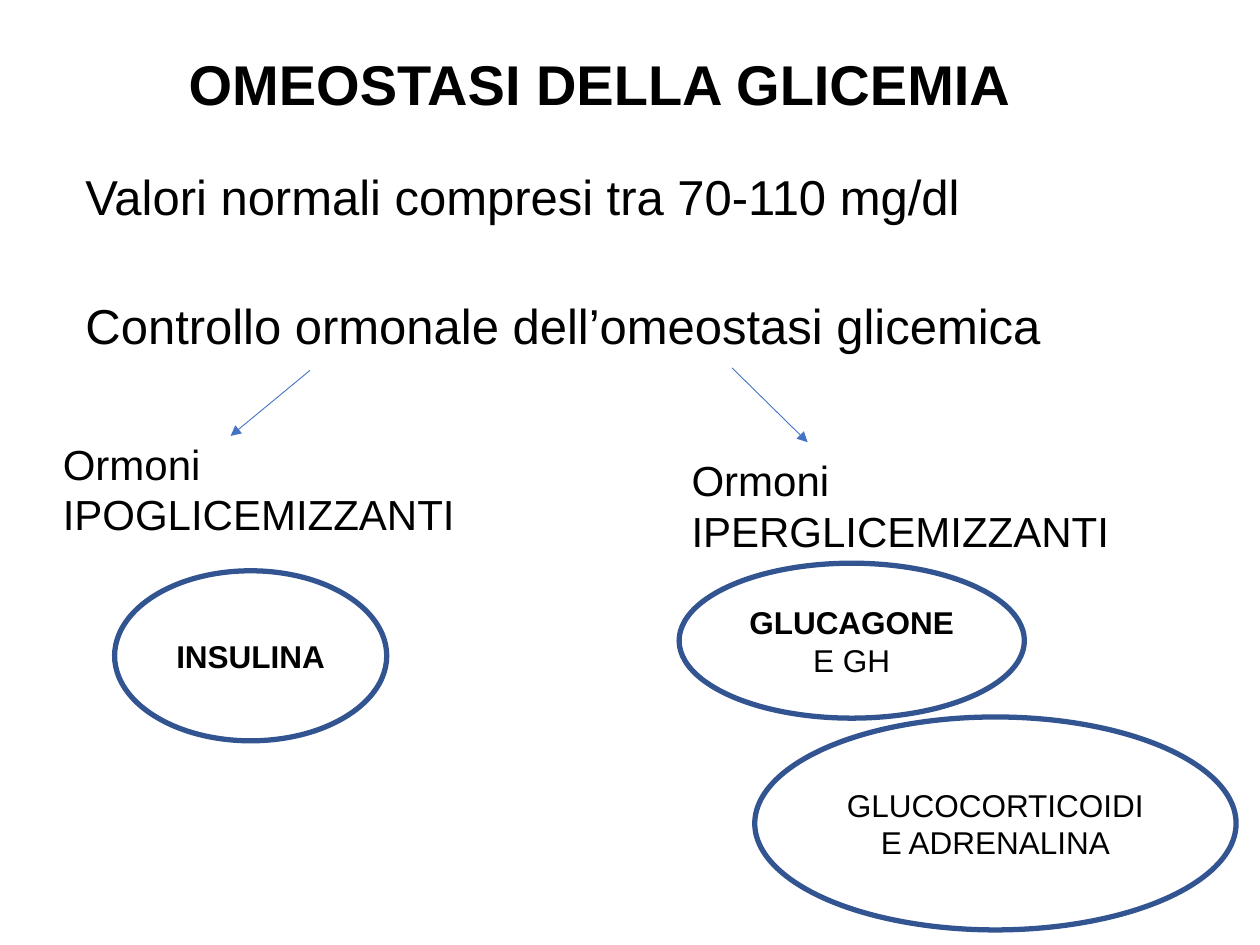
"""Build the slide on the hormonal control of blood glucose."""
from typing import NamedTuple

from lxml import etree
from pptx import Presentation
from pptx import util as u
from pptx.dml.color import RGBColor
from pptx.enum import shapes, text
from pptx.oxml import ns

BLACK = RGBColor(0x00, 0x00, 0x00)
WHITE = RGBColor(0xFF, 0xFF, 0xFF)
ARROW_BLUE = RGBColor(0x44, 0x72, 0xC4)
OUTLINE_BLUE = RGBColor(0x32, 0x54, 0x91)


class Box(NamedTuple):
    left: float
    top: float
    width: float
    height: float

    def lengths(self) -> list[u.Length]:
        return [u.Inches(value) for value in self]


class Label(NamedTuple):
    box: Box
    wording: str
    size: int
    bold: bool = False
    centered: bool = False


class Hormone(NamedTuple):
    box: Box
    bold_part: str = ""
    plain_part: str = ""


class Arrow(NamedTuple):
    start_x: float
    start_y: float
    end_x: float
    end_y: float


LABELS = [
    Label(Box(0.67, 0.34, 8.18, 0.64), "OMEOSTASI DELLA GLICEMIA", 32, True, True),
    Label(Box(0.58, 1.27, 8.85, 0.57), "Valori normali compresi tra 70-110 mg/dl", 28),
    Label(Box(0.58, 2.3, 8.85, 0.57), "Controllo ormonale dell’omeostasi glicemica", 28),
    Label(Box(0.4, 3.43, 3.49, 0.91), "Ormoni IPOGLICEMIZZANTI", 24),
    Label(Box(5.39, 3.56, 3.64, 0.91), "Ormoni IPERGLICEMIZZANTI", 24),
]
HORMONES = [
    Hormone(Box(0.91, 4.53, 2.16, 1.35), bold_part="INSULINA"),
    Hormone(Box(5.39, 4.47, 2.74, 1.23), "GLUCAGONE ", "E GH"),
    Hormone(Box(5.99, 5.69, 3.82, 1.69), plain_part="GLUCOCORTICOIDI E ADRENALINA"),
]
ARROWS = [Arrow(2.46, 2.94, 1.83, 3.46), Arrow(5.81, 2.92, 6.41, 3.51)]


def add_run(paragraph, wording: str, *, size: int, bold: bool = False) -> None:
    run = paragraph.add_run()
    run.text = wording
    run.font.name = "Arial"
    run.font.size = u.Pt(size)
    run.font.bold = bold
    run.font.color.rgb = BLACK


def add_label(slide, label: Label) -> None:
    frame = slide.shapes.add_textbox(*label.box.lengths()).text_frame
    frame.word_wrap = True
    paragraph = frame.paragraphs[0]
    if label.centered:
        paragraph.alignment = text.PP_ALIGN.CENTER
    add_run(paragraph, label.wording, size=label.size, bold=label.bold)


def add_hormone(slide, hormone: Hormone) -> None:
    shape = slide.shapes.add_shape(shapes.MSO_SHAPE.OVAL, *hormone.box.lengths())
    shape.shadow.inherit = False
    shape.fill.solid()
    shape.fill.fore_color.rgb = WHITE
    shape.line.color.rgb = OUTLINE_BLUE
    shape.line.width = u.Pt(3)
    frame = shape.text_frame
    frame.word_wrap = True
    frame.vertical_anchor = text.MSO_ANCHOR.MIDDLE
    paragraph = frame.paragraphs[0]
    paragraph.alignment = text.PP_ALIGN.CENTER
    for wording, bold in ((hormone.bold_part, True), (hormone.plain_part, False)):
        if wording:
            add_run(paragraph, wording, size=18, bold=bold)


def add_arrow(slide, arrow: Arrow) -> None:
    connector = slide.shapes.add_connector(
        shapes.MSO_CONNECTOR.STRAIGHT, *(u.Inches(value) for value in arrow)
    )
    connector.line.color.rgb = ARROW_BLUE
    connector.line.width = u.Pt(0.5)
    properties = connector._element.spPr
    outline = properties.find(ns.qn("a:ln"))
    etree.SubElement(outline, ns.qn("a:tailEnd"), type="triangle")
    etree.SubElement(properties, ns.qn("a:effectLst"))


def main() -> None:
    presentation = Presentation()
    presentation.slide_width = u.Inches(10)
    presentation.slide_height = u.Inches(7.5)
    slide = presentation.slides.add_slide(presentation.slide_layouts[6])
    for label in LABELS:
        add_label(slide, label)
    for hormone in HORMONES:
        add_hormone(slide, hormone)
    for arrow in ARROWS:
        add_arrow(slide, arrow)
    presentation.save("out.pptx")


if __name__ == "__main__":
    main()
